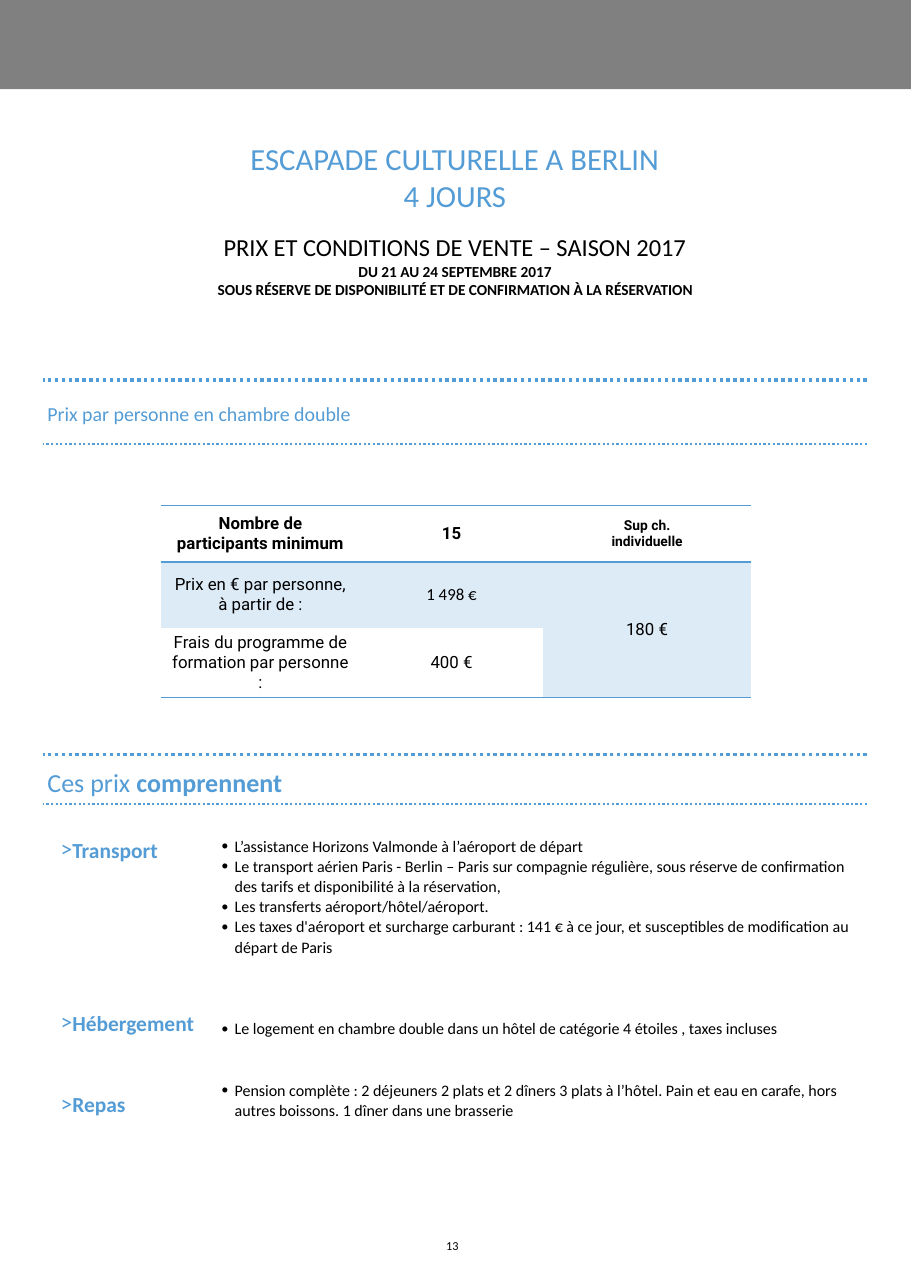
from lxml.etree import SubElement
from pptx import Presentation
from pptx.dml.color import RGBColor
from pptx.enum.dml import MSO_LINE
from pptx.enum.shapes import MSO_CONNECTOR, MSO_SHAPE
from pptx.enum.text import MSO_ANCHOR, MSO_AUTO_SIZE, PP_ALIGN
from pptx.oxml.ns import qn
from pptx.util import Emu, Pt

SCALE = 9144
BLUE, PALE, BLACK, GREY = "549CD5", "DDEBF7", "000000", "808080"
NO_GRID = "{2D5ABB26-0587-4C30-8999-92F81FD0307C}"
LEFT, WIDTH, INSET = 39, 748, 4

HEADING = [("ESCAPADE CULTURELLE A BERLIN", 20, False), ("4 JOURS", 20, False)]
CONDITIONS = [
    ("PRIX ET CONDITIONS DE VENTE – SAISON 2017", 16, False),
    ("DU 21 AU 24 SEPTEMBRE 2017", 10, True),
    ("SOUS RÉSERVE DE DISPONIBILITÉ ET DE CONFIRMATION À LA RÉSERVATION", 10, True),
]
RUBRICS = [("Transport", 0), ("Hébergement", 98), ("Repas", 38)]
SERVICES = [
    ("L’assistance Horizons Valmonde à l’aéroport de départ", 0),
    ("Le transport aérien Paris - Berlin – Paris sur compagnie régulière, "
     "sous réserve de confirmation des tarifs et disponibilité à la réservation,", 0),
    ("Les transferts aéroport/hôtel/aéroport.", 0),
    ("Les taxes d'aéroport et surcharge carburant : 141 € à ce jour, "
     "et susceptibles de modification au départ de Paris", 0),
    ("Le logement en chambre double dans un hôtel de catégorie 4 étoiles , "
     "taxes incluses", 40),
    ("Pension complète : 2 déjeuners 2 plats et 2 dîners 3 plats à l’hôtel. "
     "Pain et eau en carafe, hors autres boissons. 1 dîner dans une brasserie", 27),
]
PRICES = [
    [["Nombre de participants minimum"], ["15"], ["Sup ch.", "individuelle"]],
    [["Prix en € par personne,", "à partir de :"], ["1 498 €"], ["180 €"]],
    [["Frais du programme de formation par personne :"], ["400 €"], []],
]


def px(value):
    return Emu(value * SCALE)


def color(code):
    return RGBColor.from_string(code)


def add_run(paragraph, text, size, code, bold=False, font="Calibri"):
    run = paragraph.add_run()
    run.text = text
    run.font.name = font
    run.font.size = Pt(size)
    run.font.bold = bold
    run.font.color.rgb = color(code)


def paragraphs(frame, count):
    return [frame.paragraphs[0]] + [frame.add_paragraph() for _ in range(count - 1)]


def prepare_frame(frame, anchor, right=INSET):
    frame.word_wrap = True
    frame.auto_size = MSO_AUTO_SIZE.NONE
    frame.vertical_anchor = anchor
    frame.margin_left, frame.margin_right = px(INSET), px(right)
    frame.margin_top = frame.margin_bottom = 0


def add_text(slide, left, top, width, height, anchor=MSO_ANCHOR.TOP, right=INSET):
    frame = slide.shapes.add_textbox(px(left), px(top), px(width), px(height)).text_frame
    prepare_frame(frame, anchor, right)
    return frame


def set_bullet(paragraph, sign, percent, margin, indent):
    props = paragraph._p.get_or_add_pPr()
    props.set("marL", str(px(margin)))
    props.set("indent", str(px(indent)))
    SubElement(props, qn("a:buSzPct")).set("val", str(percent * 1000))
    SubElement(props, qn("a:buFont")).set("typeface", "Calibri")
    SubElement(props, qn("a:buChar")).set("char", sign)


def add_list(frame, entries, bullet, spacing, size, code, bold):
    for paragraph, (text, gap) in zip(paragraphs(frame, len(entries)), entries):
        set_bullet(paragraph, *bullet)
        paragraph.line_spacing = spacing
        if gap:
            paragraph.space_before = Pt(gap)
        add_run(paragraph, text, size, code, bold)


def add_dotted_rule(slide, top, weight):
    rule = slide.shapes.add_connector(
        MSO_CONNECTOR.STRAIGHT, px(LEFT + WIDTH), px(top), px(LEFT), px(top))
    rule.line.color.rgb = color(BLUE)
    rule.line.width = Pt(weight)
    rule.line.dash_style = MSO_LINE.ROUND_DOT
    SubElement(rule._element.spPr, qn("a:effectLst"))


def add_band(slide):
    band = slide.shapes.add_shape(MSO_SHAPE.RECTANGLE, 0, 0, px(827), px(81))
    band.shadow.inherit = False
    band.fill.solid()
    band.fill.fore_color.rgb = color(GREY)
    band.line.fill.background()


def add_heading(slide):
    heading = slide.shapes.title
    heading.left, heading.top, heading.width, heading.height = map(px, (LEFT, 92, WIDTH, 102))
    prepare_frame(heading.text_frame, MSO_ANCHOR.BOTTOM)
    paragraph = heading.text_frame.paragraphs[0]
    paragraph.alignment = PP_ALIGN.CENTER
    for index, (text, size, bold) in enumerate(HEADING):
        if index:
            paragraph.add_line_break()
        add_run(paragraph, text, size, BLUE, bold)


def add_conditions(slide):
    frame = add_text(slide, LEFT, 211, WIDTH, 98)
    for paragraph, (text, size, bold) in zip(paragraphs(frame, len(CONDITIONS)), CONDITIONS):
        paragraph.alignment = PP_ALIGN.CENTER
        add_run(paragraph, text, size, BLACK, bold)


def add_section_title(slide, top, height, size, pieces, spacing=1.0):
    frame = add_text(slide, LEFT, top, WIDTH, height, MSO_ANCHOR.MIDDLE)
    paragraph = frame.paragraphs[0]
    paragraph.line_spacing = spacing
    for text, bold in pieces:
        add_run(paragraph, text, size, BLUE, bold)


def set_border(cell, edge):
    border = SubElement(cell._tc.get_or_add_tcPr(), qn("a:" + edge), w=str(Pt(1)))
    fill = SubElement(border, qn("a:solidFill"))
    SubElement(fill, qn("a:srgbClr")).set("val", BLUE)


def format_price_cell(cell, lines, row, column):
    cell.vertical_anchor = MSO_ANCHOR.MIDDLE
    cell.margin_top = cell.margin_bottom = px(3)
    if row == 0:
        set_border(cell, "lnT")
    if row != 1 or column == 2:
        set_border(cell, "lnB")
    if row == 1 or (row == 2 and column == 2):
        cell.fill.solid()
        cell.fill.fore_color.rgb = color(PALE)
    else:
        cell.fill.background()
    size = 9 if (row, column) == (0, 2) else 11
    font = "Calibri" if (row, column) == (1, 1) else "Roboto"
    if lines:
        for paragraph, text in zip(paragraphs(cell.text_frame, len(lines)), lines):
            paragraph.alignment = PP_ALIGN.CENTER
            add_run(paragraph, text, size, BLACK, row == 0, font)


def add_prices(slide):
    frame = slide.shapes.add_table(3, 3, px(146), px(459), px(536), px(174))
    prices = frame.table
    prices.first_row = prices.horz_banding = False
    next(frame._element.iter(qn("a:tableStyleId"))).text = NO_GRID
    for column, width in zip(prices.columns, (181, 166, 189)):
        column.width = px(width)
    for row, height in zip(prices.rows, (51, 60, 63)):
        row.height = px(height)
    prices.cell(1, 2).merge(prices.cell(2, 2))
    for row, entries in enumerate(PRICES):
        for column, lines in enumerate(entries):
            format_price_cell(prices.cell(row, column), lines, row, column)


def add_page_number(slide):
    paragraph = add_text(slide, 401, 1124, 27, 13).paragraphs[0]
    add_run(paragraph, "13", 8, BLACK)


def main():
    deck = Presentation()
    deck.slide_width, deck.slide_height = px(827), px(1169)
    slide = deck.slides.add_slide(deck.slide_layouts[5])
    add_page_number(slide)
    add_band(slide)
    for top, weight in ((345, 2.25), (403, 1.5), (685, 2.25), (730, 1.5)):
        add_dotted_rule(slide, top, weight)
    add_heading(slide)
    add_conditions(slide)
    add_section_title(slide, 348, 55, 13, [("Prix par personne en chambre double", False)])
    add_prices(slide)
    add_section_title(slide, 693, 39, 17, [("Ces prix ", False), ("comprennent", True)], 0.8)
    rubrics = add_text(slide, LEFT, 762, 150, 358, right=0)
    add_list(rubrics, RUBRICS, (">", 110, 0, 12), 0.9, 14, BLUE, True)
    services = add_text(slide, 197, 758, 591, 354)
    add_list(services, SERVICES, ("•", 90, 12, -12), 1.05, 10.5, BLACK, False)
    deck.save("out.pptx")


if __name__ == "__main__":
    main()
